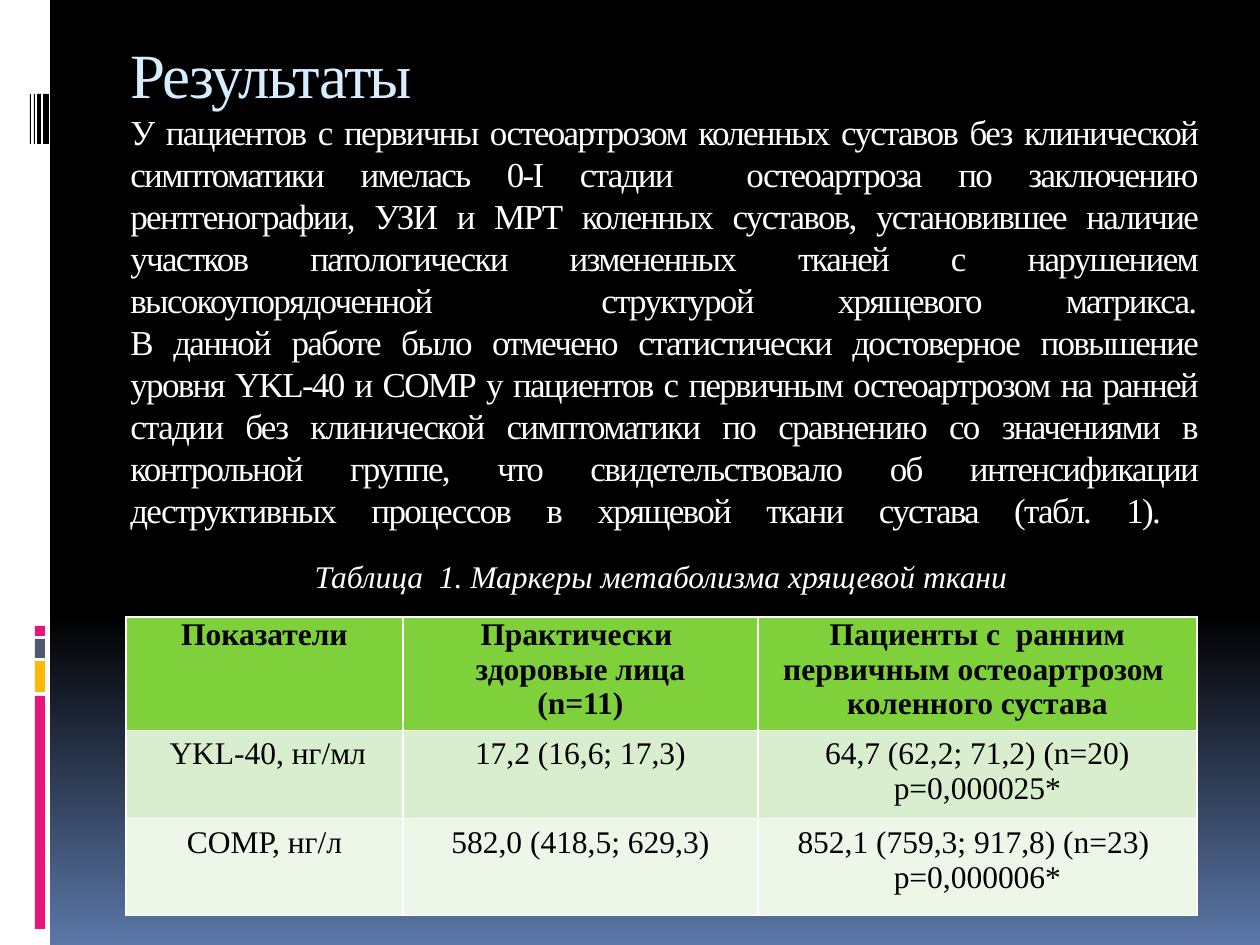
from copy import deepcopy
from pptx import Presentation
from pptx.dml.color import RGBColor
from pptx.enum.shapes import MSO_SHAPE
from pptx.enum.text import PP_ALIGN
from pptx.oxml.ns import qn
from pptx.util import Pt

PX = 914400 // 126
FONT = "Times New Roman"
HEX = dict(white="FFFFFF", black="000000", blue="5B77A8", pink="EA157A",
           gold="FEB80A", slate="4E5B6F", title="D6ECFF", head="7FD13B",
           odd="D8EECE", even="ECF7E8")

GRADIENT = [(0, "black"), (0.65, "black"), (1, "blue")]
SIDE = (0, 0, 50, 945, "white")
BLOCKS = [(626, 10, "pink"), (639, 19, "slate"),
          (661, 31, "gold"), (696, 233, "pink")]
STRIPES = [(30, 1), (34, 1), (37, 4), (43, 6)]

TITLE = "Результаты"
BODY = [
    "У пациентов с первичны остеоартрозом коленных суставов без клинической "
    "симптоматики имелась 0-I стадии  остеоартроза по заключению "
    "рентгенографии, УЗИ и МРТ коленных суставов, установившее наличие "
    "участков патологически измененных тканей с нарушением "
    "высокоупорядоченной  структурой хрящевого матрикса.",
    "В данной работе было отмечено статистически достоверное повышение "
    "уровня YKL-40 и СОМР у пациентов с первичным остеоартрозом на ранней "
    "стадии без клинической симптоматики по сравнению со значениями в "
    "контрольной группе, что свидетельствовало об интенсификации "
    "деструктивных процессов в хрящевой ткани сустава (табл. 1). ",
]
CAPTION = "Таблица  1. Маркеры метаболизма хрящевой ткани "
COLS = [277, 355, 439]
ROWS = [105, 83, 97]
CELLS = [
    ["Показатели", "Практически  здоровые лица\n(n=11)",
     "Пациенты с  ранним первичным остеоартрозом  коленного сустава"],
    [" YKL-40, нг/мл", "17,2 (16,6; 17,3)",
     "64,7 (62,2; 71,2) (n=20)\np=0,000025*"],
    ["СОМР, нг/л", "582,0 (418,5; 629,3)",
     "852,1 (759,3; 917,8) (n=23) \nр=0,000006*"],
]


def color(name):
    return RGBColor.from_string(HEX[name])


def place(*box):
    return [n * PX for n in box]


def style(para, size, name, align, bold=False, italic=False, track=None):
    para.alignment = align
    for run in para.runs:
        font = run.font
        font.name, font.size = FONT, Pt(size)
        font.bold, font.italic = bold, italic
        font.color.rgb = color(name)
        if track:
            run._r.get_or_add_rPr().set("spc", str(track))


def backdrop(slide):
    fill = slide.background.fill
    fill.gradient()
    fill.gradient_angle = 270
    stops = slide._element.find(".//" + qn("a:gsLst"))
    stops.append(deepcopy(stops[-1]))
    for stop, (pos, name) in zip(fill.gradient_stops, GRADIENT):
        stop.position = pos
        stop.color.rgb = color(name)


def bar(slide, x, y, w, h, name):
    shape = slide.shapes.add_shape(MSO_SHAPE.RECTANGLE, *place(x, y, w, h))
    shape.shadow.inherit = False
    shape.fill.solid()
    shape.fill.fore_color.rgb = color(name)
    shape.line.fill.background()


def textbox(slide, *box):
    frame = slide.shapes.add_textbox(*place(*box)).text_frame
    frame.word_wrap = True
    return frame


def grid(slide):
    """Add the table; its white rules come from the default table style."""
    table = slide.shapes.add_table(
        len(ROWS), len(COLS), *place(126, 617, sum(COLS), sum(ROWS))).table
    for col, w in zip(table.columns, COLS):
        col.width = w * PX
    for r, (texts, h) in enumerate(zip(CELLS, ROWS)):
        table.rows[r].height = h * PX
        for c, text in enumerate(texts):
            cell = table.cell(r, c)
            cell.text = text
            if r == 0:
                cell.margin_left = cell.margin_right = 9 * PX
                cell.margin_top = cell.margin_bottom = 0
            for para in cell.text_frame.paragraphs:
                style(para, 18, "black", PP_ALIGN.CENTER, bold=r == 0)
            cell.fill.solid()
            cell.fill.fore_color.rgb = color(("head", "odd", "even")[r])


def main():
    prs = Presentation()
    prs.slide_width, prs.slide_height = place(1260, 945)
    slide = prs.slides.add_slide(prs.slide_layouts[6])
    backdrop(slide)
    bar(slide, *SIDE)
    for y, h, name in BLOCKS:
        bar(slide, 35, y, 10, h, name)
    for x, w in STRIPES:
        bar(slide, x, 94, w, 50, "black")

    frame = textbox(slide, 118, 29, 1091, 501)
    # A closing line break stretches the last line to full width.
    frame.text = "\n".join([TITLE, "\v".join(BODY) + "\v"])
    head, body = frame.paragraphs
    style(head, 36, "title", PP_ALIGN.JUSTIFY, track=-100)
    style(body, 20, "white", PP_ALIGN.JUSTIFY, track=-100)

    grid(slide)
    note = textbox(slide, 128, 551, 1074, 89)
    note.text = CAPTION
    style(note.paragraphs[0], 18, "white", PP_ALIGN.CENTER, italic=True)
    prs.save("out.pptx")


if __name__ == "__main__":
    main()
